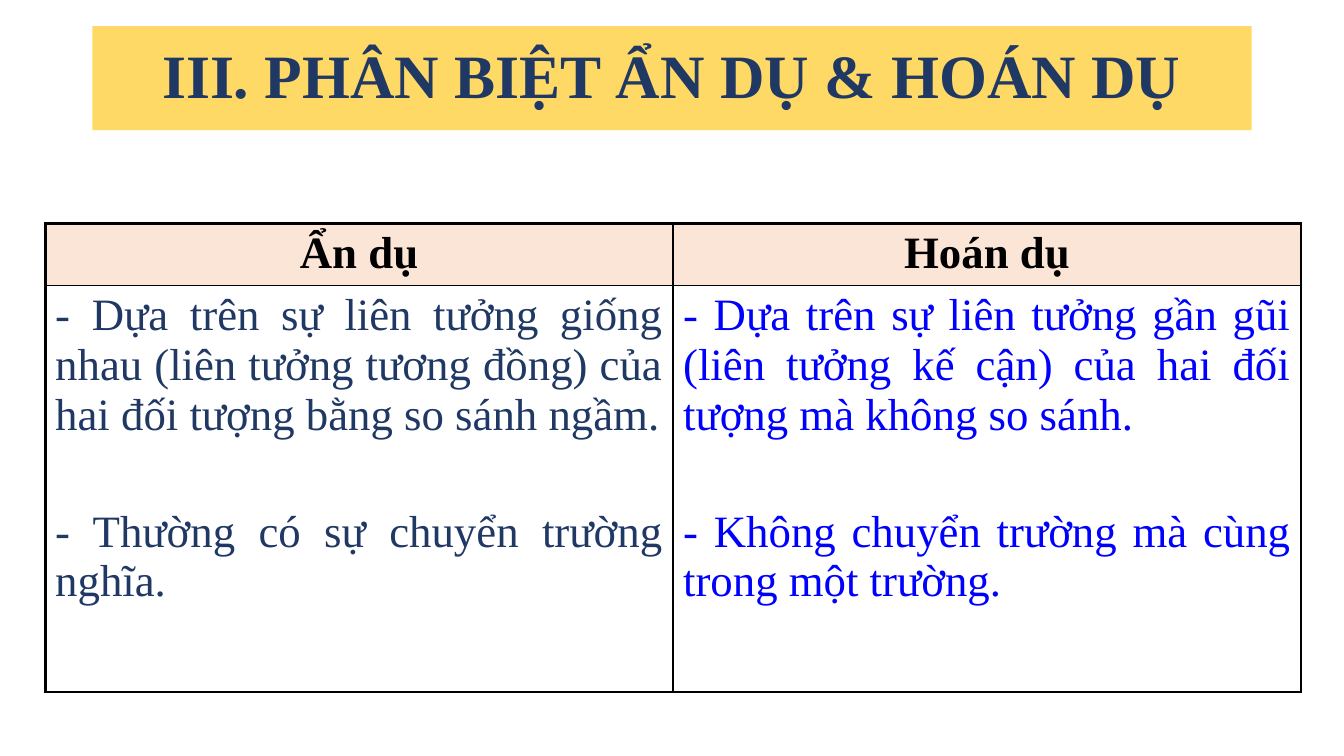
from lxml import etree
from pptx import Presentation
from pptx import util as u
from pptx.dml.color import RGBColor
from pptx.enum import text
from pptx.oxml import ns

GOLD = RGBColor(0xFF, 0xD9, 0x66)
PEACH = RGBColor(0xFB, 0xE5, 0xD6)
NAVY = RGBColor(0x20, 0x38, 0x64)
BLUE = RGBColor(0x00, 0x00, 0xFF)
BLACK = RGBColor(0x00, 0x00, 0x00)
FONT = "Times New Roman"
THICK, THIN = 2.25, 1

HEADS = ["Ẩn dụ", "Hoán dụ"]
POINTS = [
    ["- Dựa trên sự liên tưởng giống nhau (liên tưởng tương đồng) của "
     "hai đối tượng bằng so sánh ngầm.",
     "- Thường có sự chuyển trường nghĩa."],
    ["- Dựa trên sự liên tưởng gần gũi (liên tưởng kế cận) của hai đối "
     "tượng mà không so sánh.",
     "- Không chuyển trường mà cùng trong một trường."],
]


def px(n):
    return u.Emu(n * 9525)


def write(frame, lines, size=32, color=BLACK, bold=False,
          align=text.PP_ALIGN.CENTER, gap=0, lead=1.0):
    """Fill a text frame, one paragraph a line, with gap points between."""
    for i, line in enumerate(lines):
        par = frame.add_paragraph() if i else frame.paragraphs[0]
        par.alignment = align
        par.line_spacing = lead
        par.space_before = u.Pt(gap if i else 0)
        run = par.add_run()
        run.text = line
        run.font.name = FONT
        run.font.size = u.Pt(size)
        run.font.bold = bold
        run.font.color.rgb = color


def edge(cell, **widths):
    """Draw cell borders; keys L, R, T, B give widths in points."""
    props = cell._tc.get_or_add_tcPr()
    for i, side in enumerate("LRTB"):
        line = etree.Element(ns.qn(f"a:ln{side}"), w=str(u.Pt(widths[side])))
        fill = etree.SubElement(line, ns.qn("a:solidFill"))
        etree.SubElement(fill, ns.qn("a:srgbClr"), val=str(BLACK))
        props.insert(i, line)


def add_title(slide, line):
    title = slide.shapes.title
    title.left, title.top = px(88), px(25)
    title.width, title.height = px(1104), px(99)
    title.fill.solid()
    title.fill.fore_color.rgb = GOLD
    title.text_frame.vertical_anchor = text.MSO_ANCHOR.MIDDLE
    write(title.text_frame, [line], size=44, color=NAVY, bold=True, lead=0.9)


def add_grid(slide):
    grid = slide.shapes.add_table(2, 2, px(43), px(213),
                                  px(1196), px(446)).table
    grid.first_row = grid.horz_banding = False
    grid.rows[0].height, grid.rows[1].height = px(59), px(387)
    for col, color in enumerate([NAVY, BLUE]):
        grid.columns[col].width = px(598)
        head, body = grid.cell(0, col), grid.cell(1, col)
        head.fill.solid()
        head.fill.fore_color.rgb = PEACH
        body.fill.background()
        write(head.text_frame, [HEADS[col]], bold=True)
        write(body.text_frame, POINTS[col], color=color, gap=48,
              align=text.PP_ALIGN.JUSTIFY)
        left, right = (THIN, THICK) if col else (THICK, THIN)
        edge(head, L=left, R=right, T=THICK, B=THIN)
        edge(body, L=left, R=right, T=THIN, B=THICK)


def main():
    deck = Presentation()
    deck.slide_width, deck.slide_height = px(1280), px(720)
    slide = deck.slides.add_slide(deck.slide_layouts[5])
    add_title(slide, "III. PHÂN BIỆT ẨN DỤ & HOÁN DỤ")
    add_grid(slide)
    deck.save("out.pptx")


if __name__ == "__main__":
    main()
